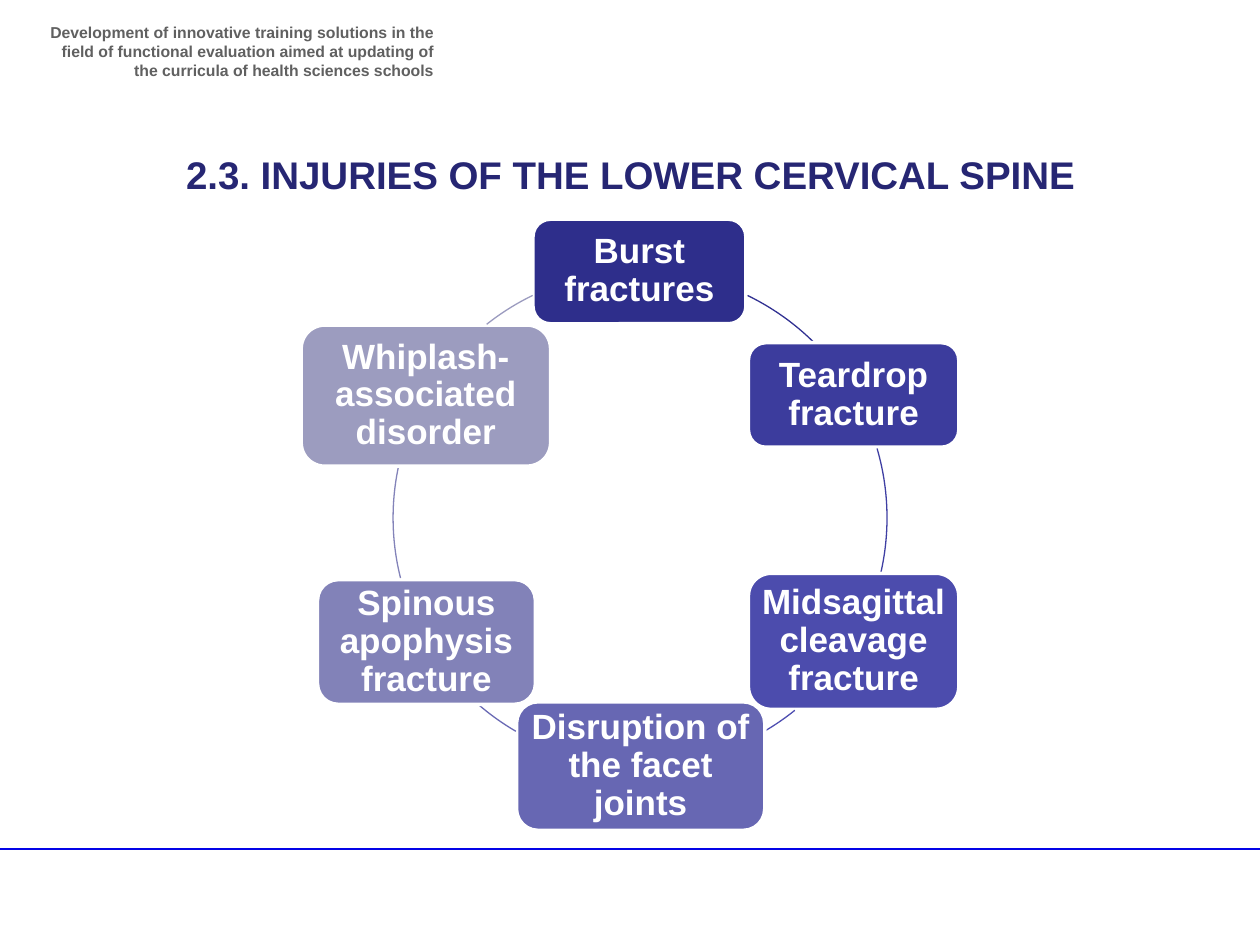
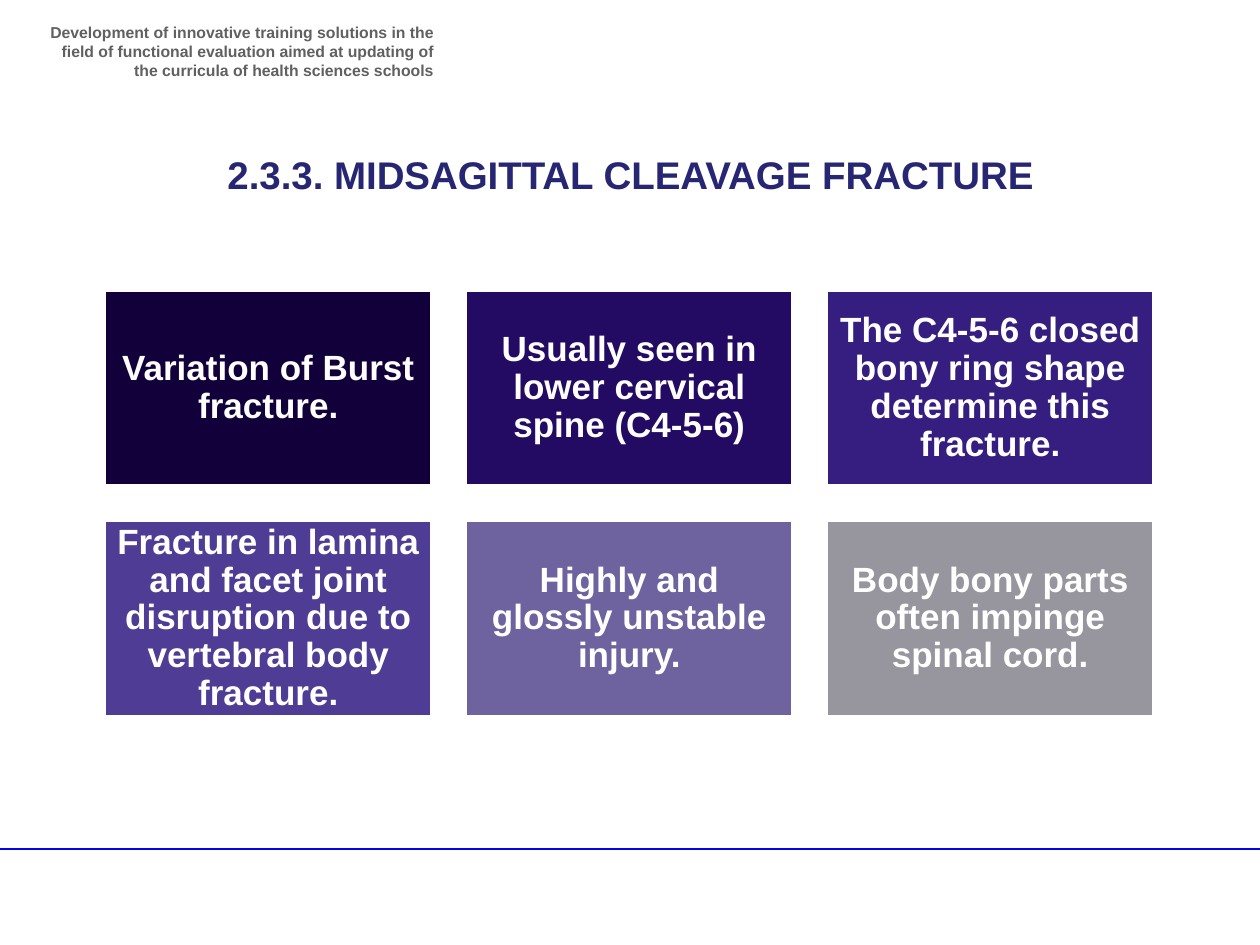
from dataclasses import dataclass

import pptx
import pptx.dml.color
import pptx.enum.shapes
import pptx.enum.text
import pptx.oxml.xmlchemy
import pptx.util
from lxml import etree
import lxml.etree
import pptx.oxml.ns

Pt = pptx.util.Pt
Align = pptx.enum.text.PP_ALIGN
Anchor = pptx.enum.text.MSO_ANCHOR
Preset = pptx.enum.shapes.MSO_SHAPE


@dataclass(frozen=True)
class Theme:
    font: str = "Arial"
    title_color: str = "262673"
    header_color: str = "606060"
    rule_color: str = "0404E6"
    white: str = "FFFFFF"
    title_size: float = 22
    header_size: float = 9
    card_size: float = 20
    card_border: float = 2
    arc_width: float = 0.75


@dataclass(frozen=True)
class Card:
    text: str
    fill: str
    left: float
    top: float
    width: float
    height: float


@dataclass(frozen=True)
class RingArc:
    """Part of the ring, clockwise in degrees from the right-hand side."""
    start: float
    end: float
    color: str


THEME = Theme()
HEADER = ("Development of innovative training solutions in the ﬁeld of functional "
          "evaluation aimed at updating of the curricula of health sciences schools")

# Ring of injuries
RING_LEFT, RING_TOP, RING_SIZE = 224.64, 154.8, 282.24
INJURIES = [
    Card("Burst fractures", "2E2E8B", 304.56, 125.28, 121.68, 59.76),
    Card("Teardrop fracture", "3C3C9D", 427.68, 195.84, 120.24, 59.76),
    Card("Midsagittal cleavage fracture", "4C4CAD", 427.68, 327.6, 120.24, 77.76),
    Card("Disruption of the facet joints", "6767B3", 295.2, 401.04, 141.84, 73.44),
    Card("Spinous apophysis fracture", "8282B8", 181.44, 331.2, 124.56, 71.28),
    Card("Whiplash-associated disorder", "9C9CBF", 172.08, 185.76, 142.56, 80.64),
]
ARCS = [
    RingArc(295.8, 314.4, "313192"),
    RingArc(343.7, 12.7, "3F3FA3"),
    RingArc(51.2, 60, "4E4EB1"),
    RingArc(120.2, 131.1, "6969B4"),
    RingArc(165.9, 192.1, "8383B9"),
    RingArc(231.6, 244.2, "9B9BBF"),
]

# Grid of facts
GRID_LEFT, GRID_TOP, GRID_COLUMNS = 59.76, 165.6, 3
CELL_WIDTH, CELL_HEIGHT = 187.2, 112.32
STEP_X, STEP_Y = 206.28, 131.76
FACTS = [
    ("Variation of Burst fracture.", "12003B"),
    ("Usually seen in lower cervical spine (C4-5-6)", "230A62"),
    ("The C4-5-6 closed bony ring shape determine this fracture.", "361E80"),
    ("Fracture in lamina and facet joint disruption due to vertebral body fracture.",
     "4F3C94"),
    ("Highly and glossly unstable injury.", "6E639E"),
    ("Body bony parts often impinge spinal cord.", "97959D"),
]


def rgb(value: str) -> pptx.dml.color.RGBColor:
    return pptx.dml.color.RGBColor.from_string(value)


def write_text(box, text: str, *, size: float, color: str, align=Align.CENTER,
               anchor=Anchor.TOP, spacing: float = 1.0,
               inset_x: float = 7.2, inset_y: float = 3.6) -> None:
    """Fill a shape with one bold paragraph."""
    frame = box.text_frame
    frame.word_wrap = True
    frame.auto_size = pptx.enum.text.MSO_AUTO_SIZE.NONE
    frame.vertical_anchor = anchor
    frame.margin_left = frame.margin_right = Pt(inset_x)
    frame.margin_top = frame.margin_bottom = Pt(inset_y)
    para = frame.paragraphs[0]
    para.alignment = align
    para.line_spacing = spacing
    span = para.add_run()
    span.text = text
    span.font.name = THEME.font
    span.font.size = Pt(size)
    span.font.bold = True
    span.font.color.rgb = rgb(color)


def add_page(deck, title: str):
    """Add a page with the shared rule, header and title."""
    page = deck.slides.add_slide(deck.slide_layouts[5])

    rule = page.shapes.add_connector(pptx.enum.shapes.MSO_CONNECTOR.STRAIGHT,
                                     Pt(-3.6), Pt(485.28), Pt(720), Pt(485.28))
    rule.line.color.rgb = rgb(THEME.rule_color)
    rule.line.width = Pt(1)
    lxml.etree.SubElement(rule._element.spPr, pptx.oxml.ns.qn("a:effectLst"))

    header = page.shapes.add_textbox(Pt(20.16), Pt(9.36), Pt(234.72), Pt(33.84))
    write_text(header, HEADER, size=THEME.header_size, color=THEME.header_color,
               align=Align.RIGHT)

    heading = page.shapes.title
    heading.left, heading.top = Pt(32.4), Pt(82.8)
    heading.width, heading.height = Pt(655.92), Pt(33.84)
    write_text(heading, title, size=THEME.title_size, color=THEME.title_color)
    return page


def add_card(page, card: Card, preset, inset_x: float) -> None:
    box = page.shapes.add_shape(preset, Pt(card.left), Pt(card.top),
                                Pt(card.width), Pt(card.height))
    box.shadow.inherit = False
    box.fill.solid()
    box.fill.fore_color.rgb = rgb(card.fill)
    box.line.color.rgb = rgb(THEME.white)
    box.line.width = Pt(THEME.card_border)
    write_text(box, card.text, size=THEME.card_size, color=THEME.white,
               anchor=Anchor.MIDDLE, spacing=0.9, inset_x=inset_x, inset_y=3)


def add_arc(page, arc: RingArc) -> None:
    curve = page.shapes.add_shape(Preset.ARC, Pt(RING_LEFT), Pt(RING_TOP),
                                  Pt(RING_SIZE), Pt(RING_SIZE))
    # Angles are stored in 60000ths of a degree, adjustments in 100000ths
    curve.adjustments[0] = arc.start * 0.6
    curve.adjustments[1] = arc.end * 0.6
    curve.shadow.inherit = False
    curve.fill.background()
    curve.line.color.rgb = rgb(arc.color)
    curve.line.width = Pt(THEME.arc_width)


def build_injury_ring(deck) -> None:
    page = add_page(deck, "2.3. INJURIES OF THE LOWER CERVICAL SPINE")
    for card, arc in zip(INJURIES, ARCS):
        add_card(page, card, Preset.ROUNDED_RECTANGLE, inset_x=3)
        add_arc(page, arc)


def build_fact_grid(deck) -> None:
    page = add_page(deck, "2.3.3. MIDSAGITTAL CLEAVAGE FRACTURE")
    for index, (text, fill) in enumerate(FACTS):
        row, column = divmod(index, GRID_COLUMNS)
        card = Card(text, fill, GRID_LEFT + column * STEP_X, GRID_TOP + row * STEP_Y,
                    CELL_WIDTH, CELL_HEIGHT)
        add_card(page, card, Preset.RECTANGLE, inset_x=5.76)


def main() -> None:
    deck = pptx.Presentation()
    deck.slide_width, deck.slide_height = Pt(720), Pt(540)
    build_injury_ring(deck)
    build_fact_grid(deck)
    deck.save("out.pptx")


if __name__ == "__main__":
    main()
